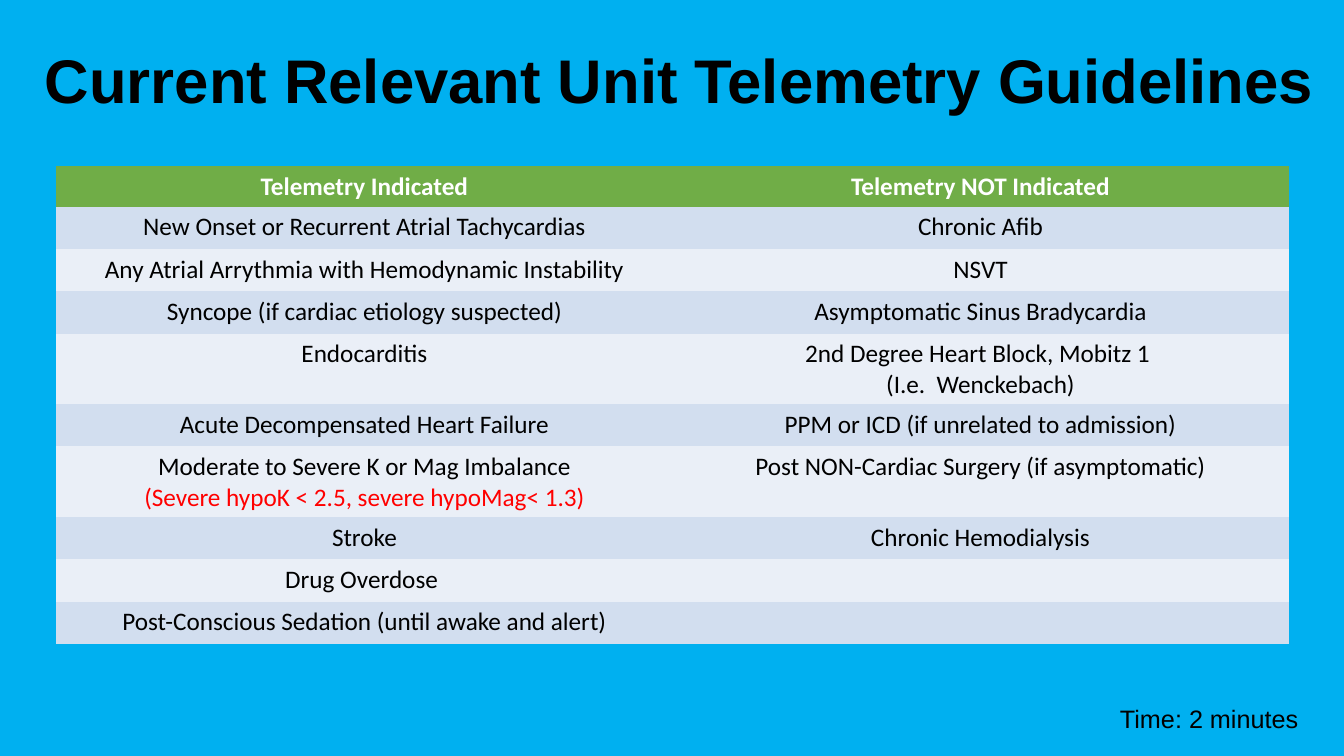
from lxml import etree
from pptx import Presentation
from pptx.dml.color import RGBColor
from pptx.enum.text import MSO_ANCHOR, PP_ALIGN
from pptx.oxml.ns import qn
from pptx.util import Inches, Pt

CENTER, LEFT = PP_ALIGN.CENTER, PP_ALIGN.LEFT
TOP = MSO_ANCHOR.TOP

COLORS = {
    "back": "00B0F0",
    "head": "70AD47",
    "odd": "D2DEEF",
    "even": "EAEFF7",
    "text": "000000",
    "white": "FFFFFF",
    "alert": "FF0000",
}

# Each cell is a list of lines; a line is text or (text, color)
ROWS = [
    (["Telemetry Indicated"], ["Telemetry NOT Indicated"]),
    (["New Onset or Recurrent Atrial Tachycardias"], ["Chronic Afib"]),
    (["Any Atrial Arrythmia with Hemodynamic Instability"], ["NSVT"]),
    (["Syncope (if cardiac etiology suspected)"],
     ["Asymptomatic Sinus Bradycardia"]),
    (["Endocarditis"],
     ["2nd Degree Heart Block, Mobitz 1 ", "(I.e.  Wenckebach)"]),
    (["Acute Decompensated Heart Failure"],
     ["PPM or ICD (if unrelated to admission)"]),
    (["Moderate to Severe K or Mag Imbalance",
      ("(Severe hypoK < 2.5, severe hypoMag< 1.3)", "alert")],
     ["Post NON-Cardiac Surgery (if asymptomatic)"]),
    (["Stroke"], ["Chronic Hemodialysis"]),
    (["Drug Overdose "], []),
    (["Post-Conscious Sedation (until awake and alert)"], []),
]


def rgb(name):
    return RGBColor.from_string(COLORS[name])


def write(para, text, size=18, font="Calibri", color="text", bold=False,
          align=CENTER):
    para.alignment = align
    run = para.add_run()
    run.text = text
    run.font.size = Pt(size)
    run.font.name = font
    run.font.bold = bold
    run.font.color.rgb = rgb(color)


def add_title(slide, text):
    title = slide.shapes.title
    title.left, title.top = Inches(-0.02), Inches(0.37)
    title.width, title.height = Inches(13.36), Inches(0.84)
    frame = title.text_frame
    frame.word_wrap = True
    frame.vertical_anchor = TOP
    write(frame.paragraphs[0], text, size=44, font="Arial", bold=True)


def add_note(slide, text):
    box = slide.shapes.add_textbox(
        Inches(11.01), Inches(6.93), Inches(2.27), Inches(0.4))
    box.text_frame.word_wrap = True
    write(box.text_frame.paragraphs[0], text, font="Arial", align=LEFT)


def clear_lines(cell):
    props = cell._tc.get_or_add_tcPr()
    for i, side in enumerate(("a:lnL", "a:lnR", "a:lnT", "a:lnB")):
        line = etree.Element(qn(side), w="0")
        etree.SubElement(line, qn("a:noFill"))
        props.insert(i, line)


def fill_cell(cell, lines, fill, color, bold):
    cell.fill.solid()
    cell.fill.fore_color.rgb = rgb(fill)
    clear_lines(cell)
    frame = cell.text_frame
    for i, line in enumerate(lines):
        text, tint = (line, color) if isinstance(line, str) else line
        para = frame.add_paragraph() if i else frame.paragraphs[0]
        write(para, text, color=tint, bold=bold)


def add_grid(slide, rows):
    table = slide.shapes.add_table(
        len(rows), 2, Inches(0.56), Inches(1.65),
        Inches(12.22), Inches(4.74)).table
    for col in table.columns:
        col.width = Inches(6.11)
    for r, row in enumerate(rows):
        head = r == 0
        tall = max(len(lines) for lines in row) > 1
        table.rows[r].height = Inches(0.4 if head else 0.7 if tall else 0.42)
        fill = "head" if head else "odd" if r % 2 else "even"
        for c, lines in enumerate(row):
            fill_cell(table.cell(r, c), lines, fill,
                      "white" if head else "text", head)


def main():
    deck = Presentation()
    deck.slide_width, deck.slide_height = Inches(13.33), Inches(7.5)
    slide = deck.slides.add_slide(deck.slide_layouts[5])

    # Background
    slide.background.fill.solid()
    slide.background.fill.fore_color.rgb = rgb("back")

    # Content
    add_title(slide, " Current Relevant Unit Telemetry Guidelines")
    add_note(slide, "Time: 2 minutes")
    add_grid(slide, ROWS)

    deck.save("out.pptx")


if __name__ == "__main__":
    main()
